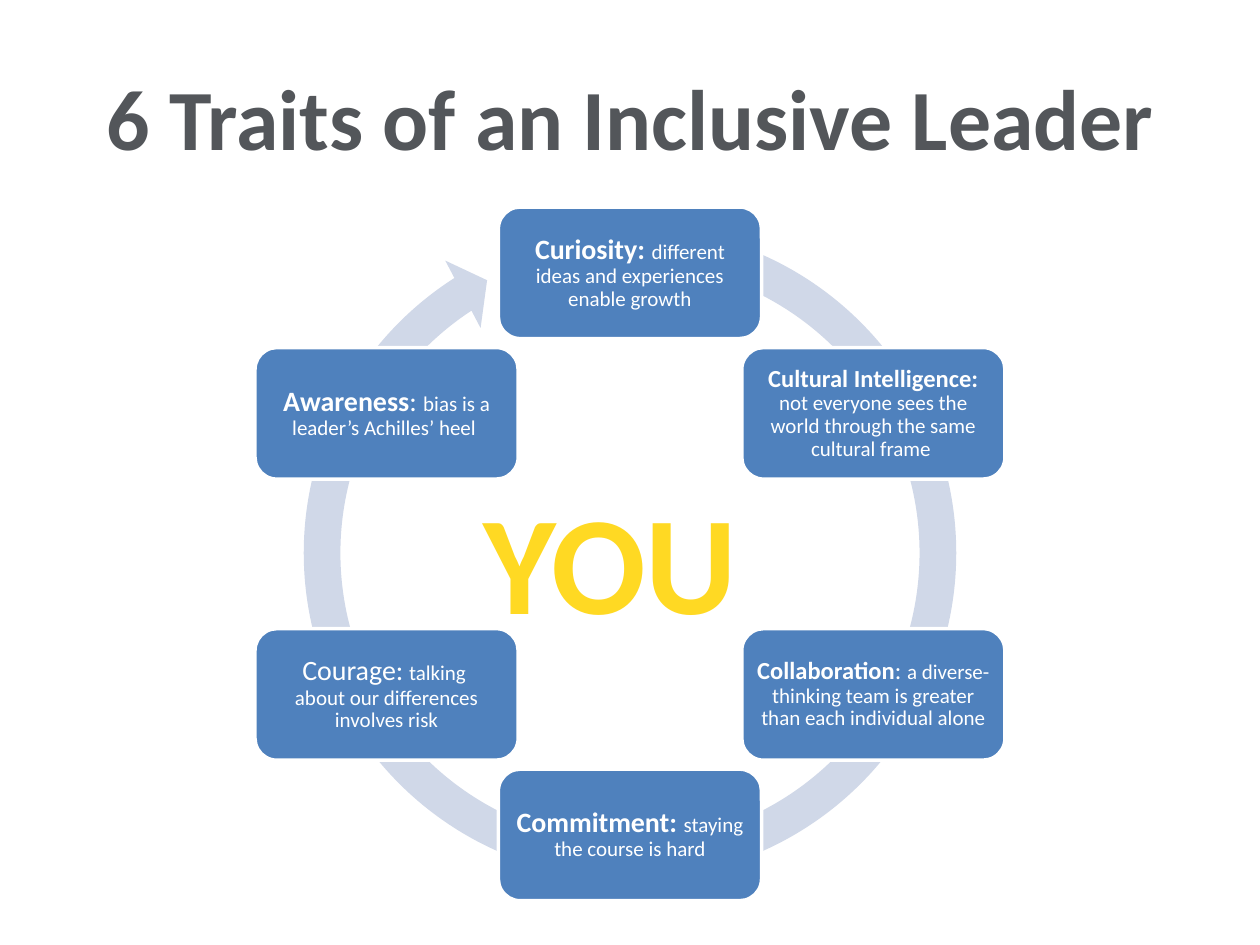
import math
from dataclasses import dataclass

import pptx
import pptx.dml.color
import pptx.enum.shapes
import pptx.enum.text
import pptx.util

Pt = pptx.util.Pt
RGB = pptx.dml.color.RGBColor.from_string
SHAPE = pptx.enum.shapes.MSO_SHAPE
MIDDLE = pptx.enum.text.MSO_ANCHOR.MIDDLE
CENTER = pptx.enum.text.PP_ALIGN.CENTER


@dataclass
class Theme:
    font: str = "Calibri"
    dark: str = "53565A"
    ring: str = "D0D8E8"
    box: str = "4F81BD"
    white: str = "FFFFFF"
    gold: str = "FFD923"
    title: int = 49
    large: int = 16
    mid: int = 14
    body: int = 12
    hub: int = 80
    space: int = 96


theme = Theme()


def style(run, size, color, bold=False):
    run.font.name = theme.font
    run.font.size = Pt(size)
    run.font.bold = bold
    run.font.color.rgb = RGB(color)


def write(para, parts, color):
    """Add (text, size, bold) runs, centred; a newline becomes a line break."""
    para.alignment = CENTER
    for text, size, bold in parts:
        for i, line in enumerate(text.split("\n")):
            if i:
                para.add_line_break()
            run = para.add_run()
            run.text = line
            style(run, size, color, bold)


deck = pptx.Presentation()
deck.slide_width, deck.slide_height = Pt(720), Pt(540)
slide = deck.slides.add_slide(deck.slide_layouts[5])

title = slide.shapes.title
title.left, title.top, title.width, title.height = Pt(36), Pt(21.6), Pt(648), Pt(90)
title.text_frame.text = "6 Traits of an Inclusive Leader"
title.text_frame.vertical_anchor = MIDDLE
title.text_frame.paragraphs[0].alignment = CENTER
style(title.text_frame.paragraphs[0].runs[0], theme.title, theme.dark, True)

# Ring arrow: thickness, head angle, end angle, start angle, head width
mid_x, mid_y, side = 360, 316, 395.4
ring = slide.shapes.add_shape(
    SHAPE.CIRCULAR_ARROW,
    Pt(mid_x - side / 2), Pt(mid_y - side / 2), Pt(side), Pt(side))
ring.shadow.inherit = False
turn = 0.6  # adjustment units per degree
for i, value in enumerate((5.3 / 100, 5.21 * turn, 237.14 * turn,
                           285.45 * turn, 5.5 / 100)):
    ring.adjustments[i] = value
ring.fill.solid()
ring.fill.fore_color.rgb = RGB(theme.ring)
ring.line.fill.background()

# Traits, clockwise from the top
traits = [
    [("Curiosity: ", theme.large, True),
     ("different ideas and experiences enable growth", theme.body, False)],
    [("Cultural Intelligence: ", theme.mid, True),
     ("not everyone sees the world through the same cultural frame ",
      theme.body, False)],
    [("Collaboration", theme.mid, True), (": ", theme.mid, False),
     ("a diverse-thinking team is greater than each individual alone",
      theme.body, False)],
    [("Commitment: ", theme.large, True),
     ("staying the course is hard", theme.body, False)],
    [("Courage:", theme.large, False), (" ", theme.mid, False),
     ("talking \nabout our differences involves risk", theme.body, False)],
    [("Awareness", theme.large, True), (": ", theme.large, False),
     ("bias is a leader’s Achilles’ heel ", theme.body, False)],
]
radius, wide, high = 160.6, 150.4, 75.2
for i, parts in enumerate(traits):
    angle = math.tau * i / len(traits)
    x = mid_x + radius * math.sin(angle)
    y = mid_y + 0.5 - radius * math.cos(angle)
    box = slide.shapes.add_shape(
        SHAPE.ROUNDED_RECTANGLE,
        Pt(x - wide / 2), Pt(y - high / 2), Pt(wide), Pt(high))
    box.shadow.inherit = False
    box.fill.solid()
    box.fill.fore_color.rgb = RGB(theme.box)
    box.line.color.rgb = RGB(theme.white)
    box.line.width = Pt(2)
    frame = box.text_frame
    frame.word_wrap = True
    frame.vertical_anchor = MIDDLE
    inset = Pt(0.3 * parts[0][1])
    frame.margin_left = frame.margin_right = inset
    frame.margin_top = frame.margin_bottom = inset
    frame.paragraphs[0].line_spacing = 0.9
    write(frame.paragraphs[0], parts, theme.white)

hub = slide.shapes.add_textbox(Pt(257.8), Pt(279.4), Pt(203.8), Pt(66.2))
hub.text_frame.word_wrap = True
hub.text_frame.vertical_anchor = MIDDLE
write(hub.text_frame.paragraphs[0],
      [("YOU", theme.hub, True), (" ", theme.space, True)], theme.gold)

deck.save("out.pptx")
